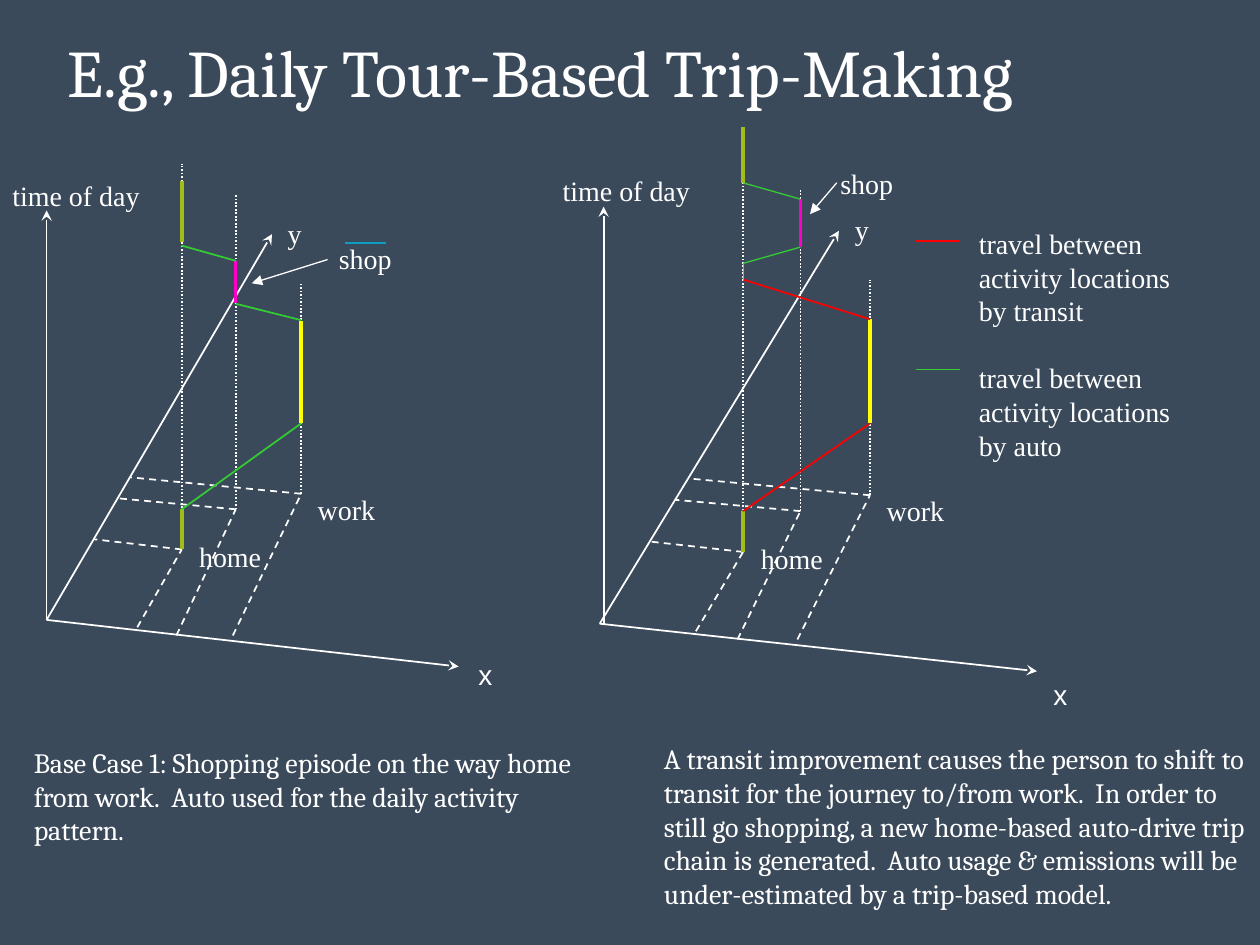
from pptx import Presentation
from pptx.dml.color import RGBColor
from pptx.enum.dml import MSO_LINE
from pptx.enum.shapes import MSO_CONNECTOR, MSO_SHAPE
from pptx.enum.text import MSO_ANCHOR, MSO_AUTO_SIZE
from pptx.oxml.ns import qn
from pptx.util import Inches, Pt
from lxml import etree

STRAIGHT, RECT = MSO_CONNECTOR.STRAIGHT, MSO_SHAPE.RECTANGLE
DASH, DOT = MSO_LINE.DASH, MSO_LINE.ROUND_DOT
MIDDLE, GROW = MSO_ANCHOR.MIDDLE, MSO_AUTO_SIZE.SHAPE_TO_FIT_TEXT
SERIF, HEAD, SANS = "Times New Roman", "Cambria", "Arial"

COLORS = {"back": "3B4A5B", "ink": "FFFFFF", "home": "A2BC1A", "work": "FFFF00",
          "shop": "FF00CC", "auto": "33CC33", "transit": "FF0000", "teal": "0D9DBF"}

# The slide is a grid of 100 columns by 75 rows
COLS, ROWS = 100, 75
CELL = Inches(0.1)

# Inside a graph, points are percent of its box, measured from the origin upward.
# Place: floor point, foot on x axis, foot on y axis, top of its dotted pole
PLACES = {
    "home": ((32.8, 17.2), (22, -1.8), (11.4, 19.7), 111.4),
    "work": ((61.8, 30.8), (45.2, -3.8), (20.5, 34.8), 82.5),
    "shop": ((45.9, 27), (31.5, -3.8), (17.3, 29.7), 104),
}

# Step: colour, line width, place and time at the start, place and time at the end
MORNING = [("home", 2, "home", 17.2, "home", 27)]
WORKDAY = [("work", 2, "work", 48, "work", 73)]
BASE = MORNING + [("auto", 1, "home", 27, "work", 48)] + WORKDAY + [
    ("auto", 1, "work", 73.2, "shop", 77.2),
    ("shop", 2, "shop", 77.5, "shop", 87.7),
    ("auto", 1, "shop", 87.7, "home", 91.4),
    ("home", 2, "home", 92.3, "home", 107.1),
]
SHIFT = MORNING + [("transit", 1, "home", 27, "work", 48)] + WORKDAY + [
    ("transit", 1, "work", 73, "home", 82.5),
    ("home", 0.75, "home", 82.5, "home", 86.4),
    ("auto", 0.75, "home", 86.4, "shop", 90.3),
    ("shop", 2, "shop", 90.3, "shop", 101.8),
    ("auto", 0.75, "shop", 101.8, "home", 105.7),
    ("home", 2, "home", 105.7, "home", 119),
]


def cells(*nums):
    return [round(n * CELL) for n in nums]


def rgb(name):
    return RGBColor.from_string(COLORS[name])


def draw(slide, start, end, color="ink", width=1, dash=None, tip=None):
    line = slide.shapes.add_connector(STRAIGHT, *cells(*start, *end))
    line.line.color.rgb = rgb(color)
    line.line.width = Pt(width)
    if dash:
        line.line.dash_style = dash
    if tip:
        etree.SubElement(line.line._get_or_add_ln(), qn("a:tailEnd"), type=tip)
    etree.SubElement(line._element.spPr, qn("a:effectLst"))


def write(slide, box, text, font=SERIF, size=16, wrap=False):
    frame = slide.shapes.add_textbox(*cells(*box)).text_frame
    frame.text = text
    frame.word_wrap = wrap
    for para in frame.paragraphs:
        for run in para.runs:
            run.font.name, run.font.size = font, Pt(size)
            run.font.color.rgb = rgb("ink")
    return frame


def space(frame):
    for para in frame.paragraphs:
        para.line_spacing = Pt(19.2)
    frame.auto_size = GROW


def graph(slide, box, day, shop, arrow, x_at, stem):
    left, top, width, height = box

    def spot(point):
        return left + point[0] * width / 100, top + height - point[1] * height / 100

    def link(start, end, *style, **more):
        draw(slide, spot(start), spot(end), *style, **more)

    # Axes
    for start, end in (((0, 0), (54.7, 94.2)), ((0, 0), (100, -11.4)),
                       ((stem, 0), (stem, 100))):
        link(start, end, tip="stealth")

    # Places on the floor and their poles
    for floor, x_foot, y_foot, peak in PLACES.values():
        link(x_foot, floor, dash=DASH)
        link(floor, y_foot, dash=DASH)
        link(floor, (floor[0], peak), dash=DOT)

    # Path through the day
    for color, thick, here, begin, there, stop in day:
        link((PLACES[here][0][0], begin), (PLACES[there][0][0], stop), color, thick)

    # Labels
    for text, point, wide, font in (
            ("time of day", (-11.3, 109.3), 12.2, SERIF), ("x", x_at, 3.1, SANS),
            ("y", (55.5, 100), 3.1, SERIF), ("home", (34, 21.2), 7, SERIF),
            ("work", (62.8, 32.6), 6.6, SERIF), ("shop", shop, 6.2, SERIF)):
        space(write(slide, (*spot(point), wide, 3.7), text, font))
    link(*arrow, width=0.75, tip="triangle")


def legend(slide, box):
    left, top = box[:2]
    modes = ("transit", "auto")
    text = "\n".join(f"travel between\nactivity locations\nby {mode}" for mode in modes)
    frame = write(slide, box, text)
    space(frame)
    frame.paragraphs[3].space_before = Pt(19.2)
    for mode, row, width in zip(modes, (1.6, 11.8), (1, 0.75)):
        draw(slide, (left - 4, top + row), (left - 0.5, top + row), mode, width)


def note(slide, box, text):
    space(write(slide, box, text, HEAD, wrap=True))


def title(slide, box, text):
    frame = write(slide, box, text, HEAD, 38, True)
    frame.vertical_anchor = MIDDLE


def ground(slide, box):
    panel = slide.shapes.add_shape(RECT, *cells(*box))
    panel.shadow.inherit = False
    panel.fill.solid()
    panel.fill.fore_color.rgb = rgb("back")
    panel.line.fill.background()


def main():
    deck = Presentation()
    deck.slide_width, deck.slide_height = cells(COLS, ROWS)
    slide = deck.slides.add_slide(deck.slide_layouts[6])

    ground(slide, (0, 0, COLS, ROWS))
    title(slide, (4.4, 0.6, 90, 10.1), "E.g., Daily Tour-Based Trip-Making")

    # Base case and transit case
    graph(slide, (3.7, 16.7, 32.7, 32.5), BASE, (67.9, 93.8),
          ((68.2, 88), (49.8, 82.2)), (101.8, -7.7), 0)
    draw(slide, (27.4, 19.3), (30.6, 19.3), "teal")
    graph(slide, (47.6, 16.4, 34.7, 33.1), SHIFT, (52.2, 111.2),
          ((54.2, 105.7), (48.1, 98.2)), (100.9, -11.5), 0.9)
    legend(slide, (76.7, 17.5, 17.3, 19.7))

    note(slide, (1.7, 58.7, 46.3, 9),
         "Base Case 1: Shopping episode on the way home from work.  "
         "Auto used for the daily activity pattern.")
    note(slide, (51.7, 58.4, 48.3, 14.4),
         "A transit improvement causes the person to shift to transit for the "
         "journey to/from work.  In order to still go shopping, a new home-based "
         "auto-drive trip chain is generated.  Auto usage & emissions will be "
         "under-estimated by a trip-based model.")

    deck.save("out.pptx")


if __name__ == "__main__":
    main()
